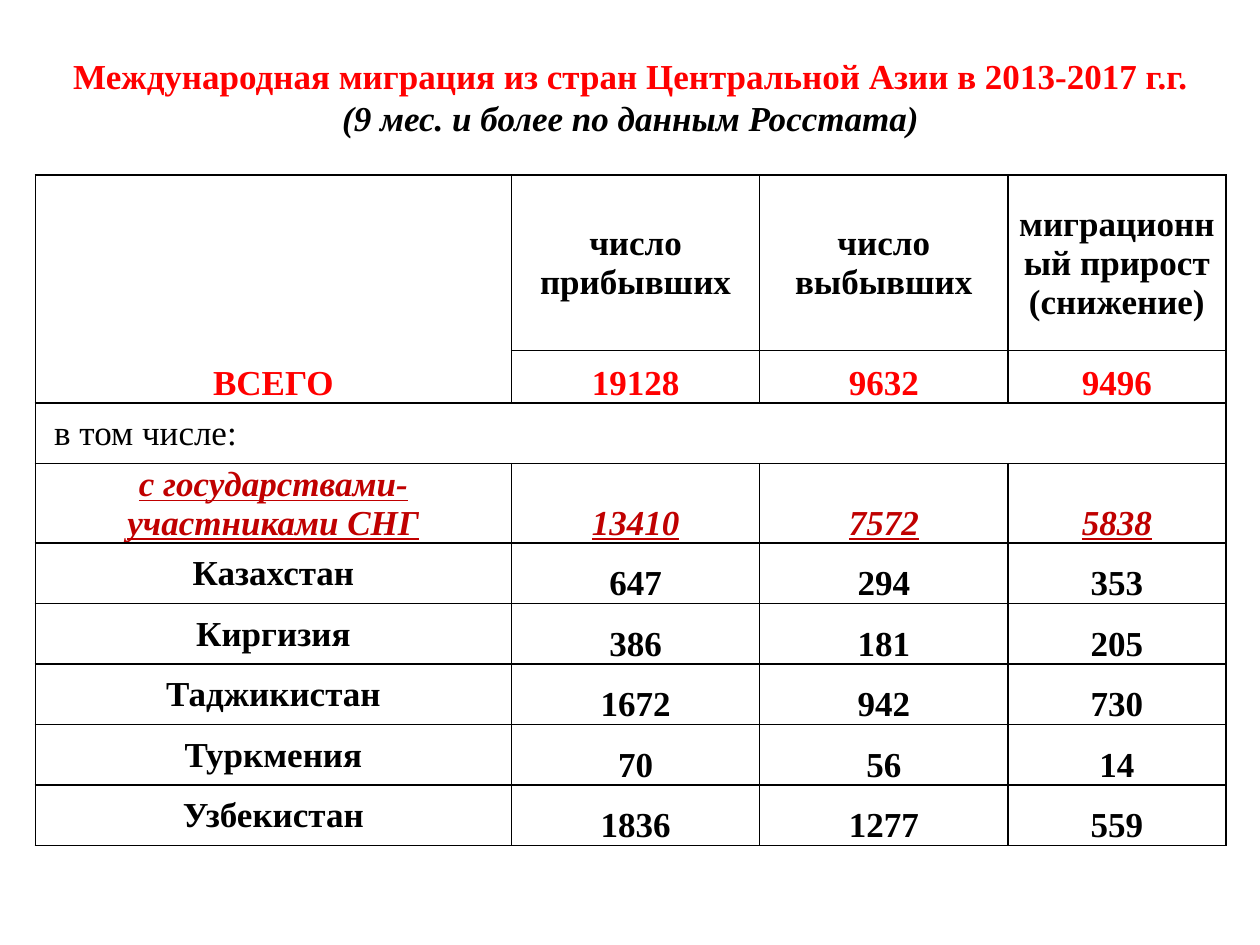
from lxml import etree
from pptx import Presentation
from pptx.dml.color import RGBColor
from pptx.enum import text
from pptx.oxml import ns
from pptx.util import Inches, Pt

BLACK, RED, DARK_RED, WHITE = "000000", "FF0000", "C00000", "FFFFFF"
MIDDLE, BOTTOM = text.MSO_ANCHOR.MIDDLE, text.MSO_ANCHOR.BOTTOM
CENTER, LEFT = text.PP_ALIGN.CENTER, text.PP_ALIGN.LEFT

COLUMN_WIDTHS = [3.78, 1.97, 1.97, 1.73]
ROW_HEIGHTS = [1.39, 0.42, 0.48, 0.63] + [0.48] * 5
HEADINGS = ["число прибывших", "число выбывших", "миграционный прирост (снижение)"]
TOTALS = ["19128", "9632", "9496"]
CIS_TOTALS = ["с государствами-участниками СНГ", "13410", "7572", "5838"]
COUNTRIES = [
    ["Казахстан", "647", "294", "353"],
    ["Киргизия", "386", "181", "205"],
    ["Таджикистан", "1672", "942", "730"],
    ["Туркмения", "70", "56", "14"],
    ["Узбекистан", "1836", "1277", "559"],
]


def color(value):
    return RGBColor.from_string(value)


def write(para, words, shade=BLACK, bold=True, italic=False, underline=False, align=CENTER):
    para.alignment = align
    span = para.add_run()
    span.text = words
    font = span.font
    font.name, font.size = "Times New Roman", Pt(20)
    font.bold, font.italic, font.underline = bold, italic, underline
    font.color.rgb = color(shade)


def style_cell(cell):
    cell.fill.solid()
    cell.fill.fore_color.rgb = color(WHITE)
    cell.margin_left = cell.margin_right = cell.margin_top = Inches(0.01)
    cell.margin_bottom = 0
    properties = cell._tc.get_or_add_tcPr()
    for position, side in enumerate(("a:lnL", "a:lnR", "a:lnT", "a:lnB")):
        line = etree.Element(ns.qn(side), w=str(Pt(1)))
        fill = etree.SubElement(line, ns.qn("a:solidFill"))
        etree.SubElement(fill, ns.qn("a:srgbClr"), val=BLACK)
        properties.insert(position, line)


def fill_cell(cell, words, anchor=BOTTOM, **form):
    cell.vertical_anchor = anchor
    write(cell.text_frame.paragraphs[0], words, **form)


def add_title(page, left, top, width, height):
    box = page.shapes.add_textbox(Inches(left), Inches(top), Inches(width), Inches(height))
    frame = box.text_frame
    frame.word_wrap = True
    write(frame.paragraphs[0],
          "Международная миграция из стран Центральной Азии в 2013-2017 г.г.", shade=RED)
    write(frame.add_paragraph(), "(9 мес. и более по данным Росстата)", italic=True)


def add_migration_table(page, left, top):
    table = page.shapes.add_table(
        len(ROW_HEIGHTS), len(COLUMN_WIDTHS), Inches(left), Inches(top),
        Inches(sum(COLUMN_WIDTHS)), Inches(sum(ROW_HEIGHTS))).table
    for column, width in zip(table.columns, COLUMN_WIDTHS):
        column.width = Inches(width)
    for row, height in zip(table.rows, ROW_HEIGHTS):
        row.height = Inches(height)
    for cell in table.iter_cells():
        style_cell(cell)

    table.cell(0, 0).merge(table.cell(1, 0))
    fill_cell(table.cell(0, 0), "ВСЕГО", shade=RED)
    for column, (heading, total) in enumerate(zip(HEADINGS, TOTALS), 1):
        fill_cell(table.cell(0, column), heading, MIDDLE)
        fill_cell(table.cell(1, column), total, shade=RED)

    including = table.cell(2, 0)
    including.merge(table.cell(2, 3))
    including.margin_left = Inches(0.15)
    fill_cell(including, "в том числе:", MIDDLE, bold=False, align=LEFT)

    for column, words in enumerate(CIS_TOTALS):
        fill_cell(table.cell(3, column), words, shade=DARK_RED, italic=True, underline=True)
    for row, values in enumerate(COUNTRIES, 4):
        for column, words in enumerate(values):
            fill_cell(table.cell(row, column), words, BOTTOM if column else MIDDLE)


def main():
    deck = Presentation()
    deck.slide_width, deck.slide_height = Inches(10), Inches(7.5)
    page = deck.slides.add_slide(deck.slide_layouts[6])
    add_migration_table(page, 0.28, 1.39)
    add_title(page, 0.28, 0.38, 9.45, 0.77)
    deck.save("out.pptx")


if __name__ == "__main__":
    main()
